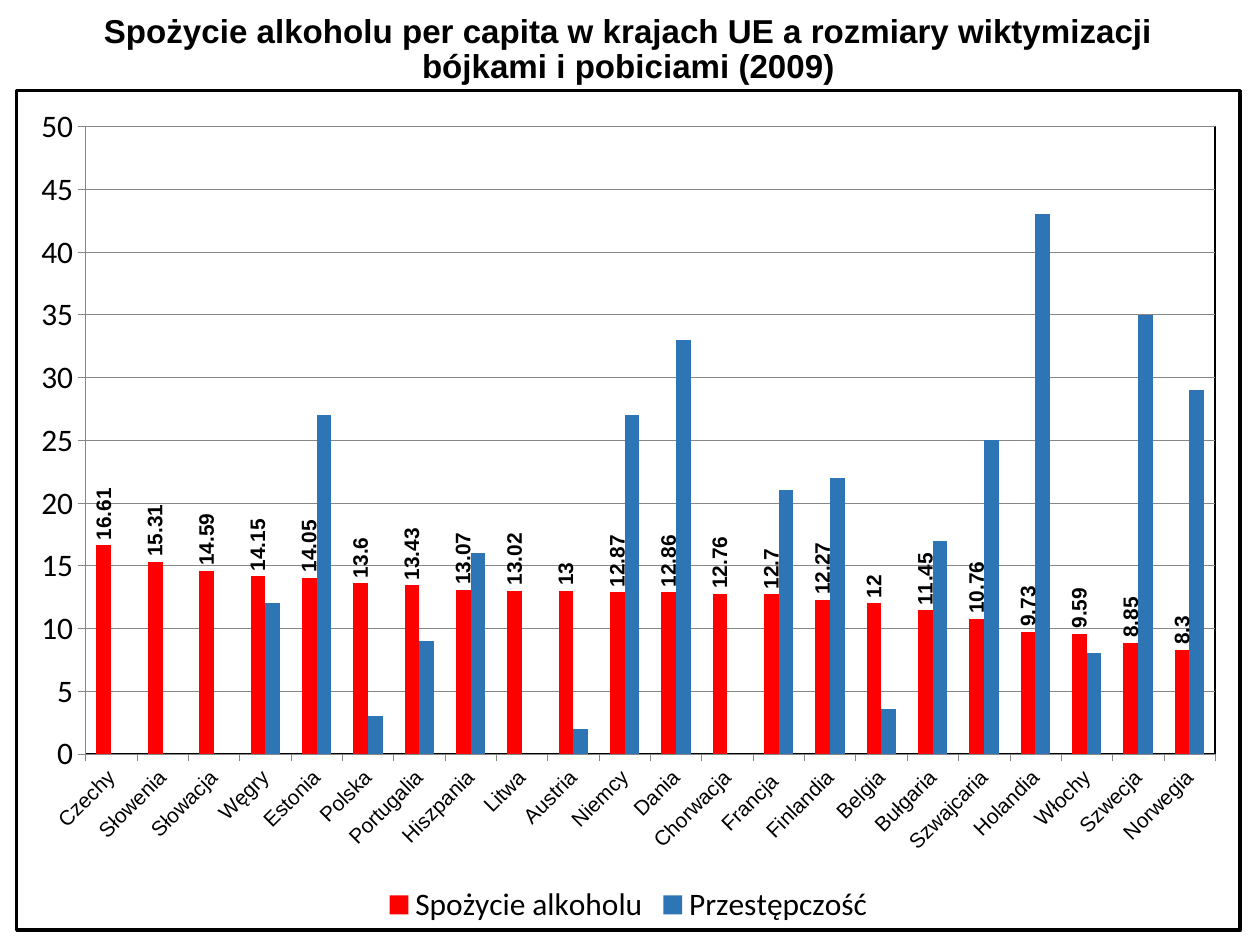
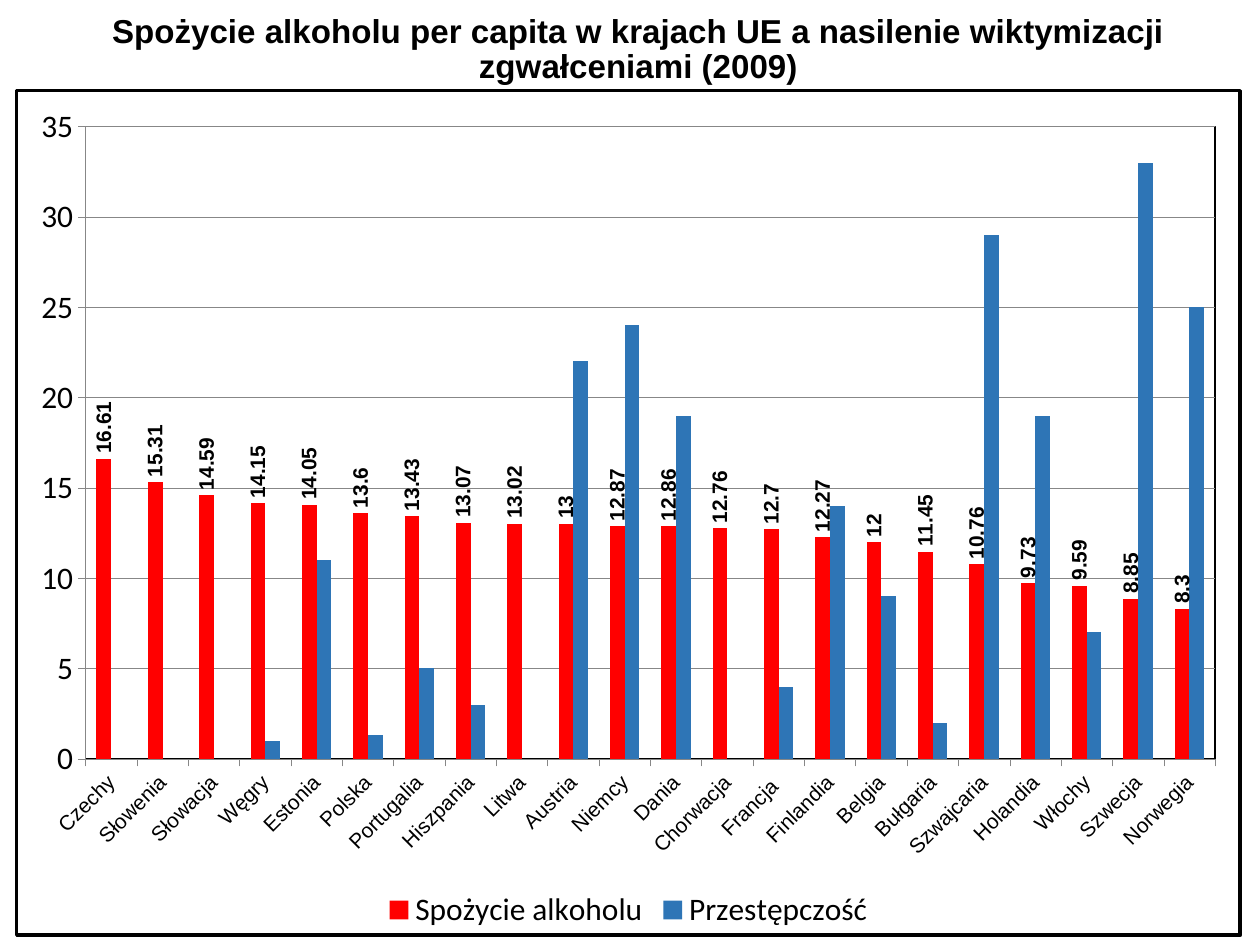
from dataclasses import dataclass

from pptx import Presentation
from pptx import util as u
from pptx.chart.data import CategoryChartData
from pptx.dml.color import RGBColor
from pptx.enum import chart as ch, text
from pptx.oxml import parse_xml
from pptx.oxml.ns import nsdecls

EMU_PER_PX = 914400 / 126


@dataclass(frozen=True)
class Theme:
    ink: str = "000000"
    grid: str = "878787"
    alcohol: str = "FF0000"
    crime: str = "2E75B6"
    paper: str = "FFFFFF"
    heading_font: str = "Arial"
    chart_font: str = "Calibri"
    heading_size: float = 18.9
    chart_size: int = 18
    label_size: int = 12
    border: int = 2
    rule: float = 0.25


COUNTRIES = [
    "Czechy", "Słowenia", "Słowacja", "Węgry", "Estonia", "Polska",
    "Portugalia", "Hiszpania", "Litwa", "Austria", "Niemcy", "Dania",
    "Chorwacja", "Francja ", "Finlandia", "Belgia", "Bułgaria",
    "Szwajcaria", "Holandia", "Włochy", "Szwecja", "Norwegia",
]
ALCOHOL = [
    16.61, 15.31, 14.59, 14.15, 14.05, 13.6, 13.43, 13.07, 13.02, 13, 12.87,
    12.86, 12.76, 12.7, 12.27, 12, 11.45, 10.76, 9.73, 9.59, 8.85, 8.3,
]
ASSAULTS = [
    None, None, None, 12, 27, 3, 9, 16, None, 2, 27,
    33, None, 21, 22, 3.6, 17, 25, 43, 8, 35, 29,
]
RAPES = [
    None, None, None, 1, 11, 1.3, 5, 3, None, 22, 24,
    19, None, 4, 14, 9, 2, 29, 19, 7, 33, 25,
]


def px(*lengths):
    return [u.Emu(round(length * EMU_PER_PX)) for length in lengths]


def outline(fill, color, points):
    return parse_xml(
        f'<c:spPr {nsdecls("c", "a")}>{fill}<a:ln w="{u.Pt(points)}"><a:solidFill>'
        f'<a:srgbClr val="{color}"/></a:solidFill></a:ln></c:spPr>'
    )


def rotate(element, degrees):
    body = element.xpath("./c:txPr/a:bodyPr")[0]
    body.set("rot", str(degrees * 60000))
    body.set("vert", "horz")


class Deck:
    def __init__(self, theme):
        self.theme = theme
        self.deck = Presentation()
        self.deck.slide_width, self.deck.slide_height = px(1260, 945)
        self.slide = None

    def new_slide(self):
        self.slide = self.deck.slides.add_slide(self.deck.slide_layouts[5])

    def style(self, font, name, size, bold=False):
        font.name, font.size, font.bold = name, u.Pt(size), bold
        font.color.rgb = RGBColor.from_string(self.theme.ink)

    def title(self, wording, left):
        heading = self.slide.shapes.title
        heading.left, heading.top, heading.width, heading.height = px(left, 12, 1159, 77)
        frame = heading.text_frame
        frame.text = wording
        frame.word_wrap = True
        frame.auto_size = text.MSO_AUTO_SIZE.NONE
        frame.vertical_anchor = text.MSO_ANCHOR.MIDDLE
        line = frame.paragraphs[0]
        line.alignment = text.PP_ALIGN.CENTER
        line.line_spacing = 0.88
        self.style(line.runs[0].font, self.theme.heading_font, self.theme.heading_size, True)

    def comparison(self, crime, ceiling, height):
        theme = self.theme
        width = 1227
        data = CategoryChartData(number_format="General")
        data.categories = COUNTRIES
        data.add_series("Spożycie alkoholu", ALCOHOL)
        data.add_series("Przestępczość", crime)
        chart = self.slide.shapes.add_chart(
            ch.XL_CHART_TYPE.COLUMN_CLUSTERED, *px(15, 89, width, height), data
        ).chart
        self.style(chart.font, theme.chart_font, theme.chart_size)
        chart.has_title = False
        chart.has_legend = True
        chart.legend.position = ch.XL_LEGEND_POSITION.BOTTOM
        chart.legend.include_in_layout = False
        self.style(chart.legend.font, theme.chart_font, theme.chart_size)
        self.columns(chart.plots[0])
        self.axes(chart, ceiling)
        self.frame(chart, width, height)

    def columns(self, plot):
        theme = self.theme
        plot.gap_width, plot.overlap = 150, 0
        plot.vary_by_categories = False
        for series, color in zip(plot.series, (theme.alcohol, theme.crime)):
            series.invert_if_negative = False
            series.format.fill.solid()
            series.format.fill.fore_color.rgb = RGBColor.from_string(color)
        amounts = plot.series[0].data_labels
        amounts.show_value = True
        amounts.position = ch.XL_LABEL_POSITION.OUTSIDE_END
        self.style(amounts.font, theme.heading_font, theme.label_size, True)
        rotate(amounts._element, -90)

    def axes(self, chart, ceiling):
        theme = self.theme
        countries, scale = chart.category_axis, chart.value_axis
        scale.minimum_scale, scale.maximum_scale, scale.major_unit = 0, ceiling, 5
        scale.has_major_gridlines = True
        self.style(countries.tick_labels.font, theme.heading_font, theme.label_size)
        self.style(scale.tick_labels.font, theme.chart_font, theme.chart_size)
        rotate(countries._element, -45)
        for ruled in (countries, scale, scale.major_gridlines):
            ruled.format.line.width = u.Pt(theme.rule)
            ruled.format.line.color.rgb = RGBColor.from_string(theme.grid)
        for axis in (countries, scale):
            axis.major_tick_mark = ch.XL_TICK_MARK.OUTSIDE
            axis.minor_tick_mark = ch.XL_TICK_MARK.NONE

    def frame(self, chart, width, height):
        theme = self.theme
        whole = chart._chartSpace.xpath("./c:chart")[0]
        area = whole.xpath("./c:plotArea")[0]
        for automatic in area.xpath("./c:layout"):
            area.remove(automatic)
        shares = {
            "x": 69 / width,
            "y": 36 / height,
            "w": 1133 / width,
            "h": (height - 213) / height,
        }
        place = "".join(f'<c:{side} val="{share:.4f}"/>' for side, share in shares.items())
        area.insert(0, parse_xml(
            f'<c:layout {nsdecls("c")}><c:manualLayout><c:layoutTarget val="inner"/>'
            f'<c:xMode val="edge"/><c:yMode val="edge"/>{place}</c:manualLayout></c:layout>'
        ))
        area.append(outline("<a:noFill/>", theme.ink, 1))
        paper = f'<a:solidFill><a:srgbClr val="{theme.paper}"/></a:solidFill>'
        whole.addnext(outline(paper, theme.ink, theme.border))


def main():
    deck = Deck(Theme())
    topics = (
        ("rozmiary wiktymizacji bójkami i pobiciami", 49, ASSAULTS, 50, 843),
        ("nasilenie wiktymizacji zgwałceniami", 59, RAPES, 35, 848),
    )
    for topic, left, crime, ceiling, height in topics:
        deck.new_slide()
        deck.title(f"Spożycie alkoholu per capita w krajach UE a {topic} (2009)", left)
        deck.comparison(crime, ceiling, height)
    deck.deck.save("out.pptx")


if __name__ == "__main__":
    main()
